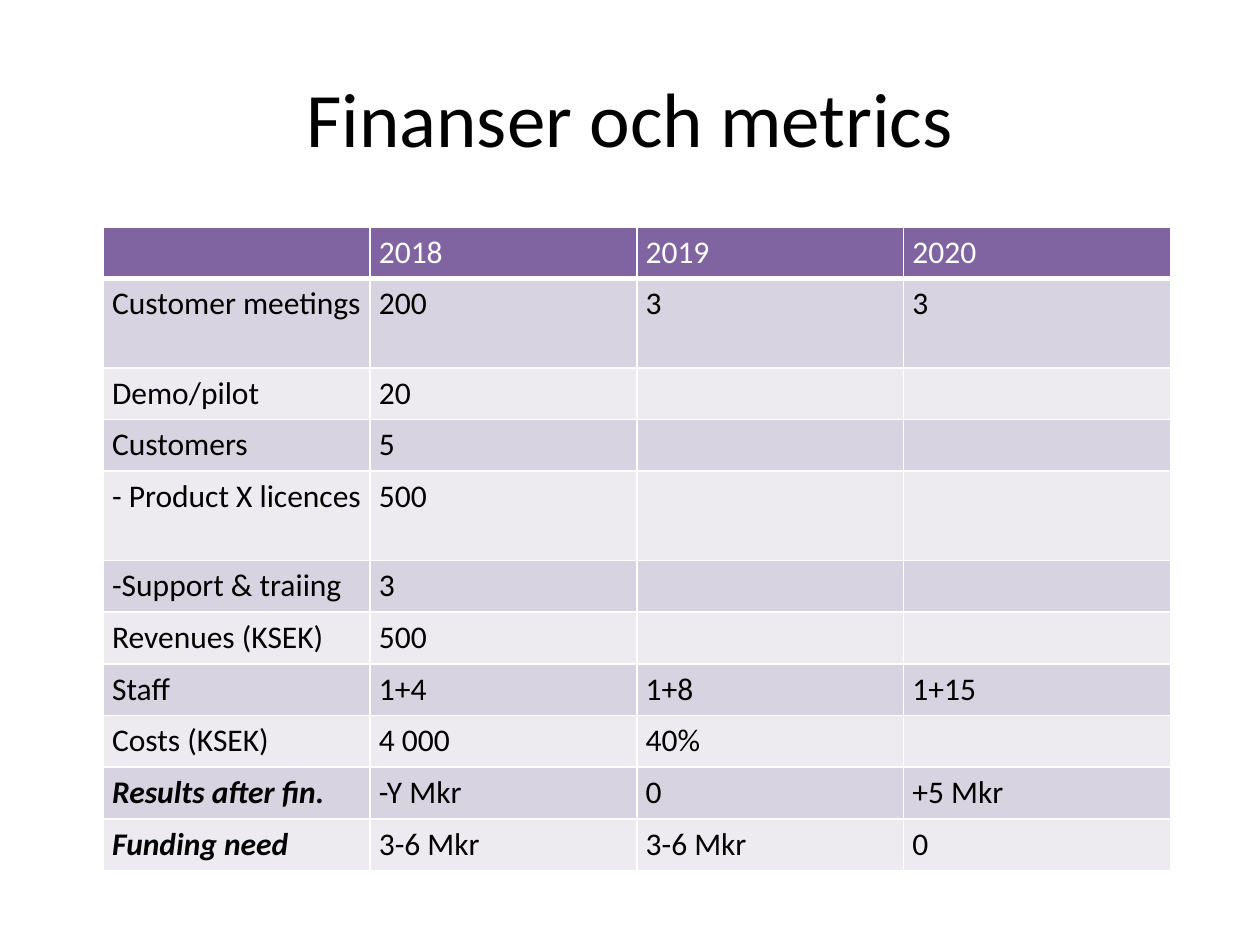
from dataclasses import dataclass

from lxml import etree
from pptx import Presentation
from pptx import util as u
from pptx.dml.color import RGBColor
from pptx.enum import text
from pptx.oxml.ns import qn

SLIDE_W, SLIDE_H = 10, 7.5
FONT = "Calibri"
WHITE, BLACK, PURPLE = "FFFFFF", "000000", "8064A2"
BANDS = ("D8D3E0", "EDEAF0")
LINE_H, TALL_H = 0.41, 0.71
THIN, THICK = 1, 3


@dataclass
class Metric:
    label: str
    years: tuple[str, str, str]
    lines: int = 1
    emphasis: bool = False


HEADER = Metric("", ("2018", "2019", "2020"))
METRICS = [
    Metric("Customer meetings", ("200", "3", "3"), lines=2),
    Metric("Demo/pilot", ("20", "", "")),
    Metric("Customers", ("5", "", "")),
    Metric("- Product X licences", ("500", "", ""), lines=2),
    Metric("-Support & traiing", ("3", "", "")),
    Metric("Revenues (KSEK)", ("500", "", "")),
    Metric("Staff", ("1+4", "1+8", "1+15")),
    Metric("Costs (KSEK)", ("4 000", "40%", "")),
    Metric("Results after fin.", ("-Y Mkr", "0", "+5 Mkr"), emphasis=True),
    Metric("Funding need", ("3-6 Mkr", "3-6 Mkr", "0"), emphasis=True),
]


def rgb(value: str) -> RGBColor:
    return RGBColor.from_string(value)


def style_font(font, size: float, color: str, emphasis: bool = False) -> None:
    font.name, font.size = FONT, u.Pt(size)
    font.color.rgb = rgb(color)
    font.bold = font.italic = emphasis


def add_borders(cell, top: float, bottom: float) -> None:
    """Draw white cell borders; call before the fill, which must follow them."""
    properties = cell._tc.get_or_add_tcPr()
    for side, width in (("L", THIN), ("R", THIN), ("T", top), ("B", bottom)):
        line = etree.SubElement(properties, qn(f"a:ln{side}"), w=str(u.Pt(width)))
        solid = etree.SubElement(line, qn("a:solidFill"))
        etree.SubElement(solid, qn("a:srgbClr"), val=WHITE)


def add_title(slide, title: str) -> None:
    box = slide.shapes.add_textbox(
        u.Inches(0.05 * SLIDE_W), u.Inches(0.04 * SLIDE_H),
        u.Inches(0.9 * SLIDE_W), u.Inches(SLIDE_H / 6))
    frame = box.text_frame
    frame.word_wrap = True
    frame.vertical_anchor = text.MSO_ANCHOR.MIDDLE
    frame.text = title
    frame.paragraphs[0].alignment = text.PP_ALIGN.CENTER
    style_font(frame.paragraphs[0].runs[0].font, 44, BLACK)


def fill_row(table, row: int, metric: Metric) -> None:
    is_header = row == 0
    table.rows[row].height = u.Inches(LINE_H if metric.lines == 1 else TALL_H)
    for column, content in enumerate((metric.label, *metric.years)):
        cell = table.cell(row, column)
        add_borders(cell, THICK if row == 1 else THIN, THICK if is_header else THIN)
        cell.fill.solid()
        cell.fill.fore_color.rgb = rgb(PURPLE if is_header else BANDS[(row - 1) % 2])
        cell.margin_left = cell.margin_right = u.Inches(0.07)
        cell.margin_top = cell.margin_bottom = u.Inches(0.05)
        if content:
            cell.text_frame.text = content
            style_font(cell.text_frame.paragraphs[0].runs[0].font, 18,
                       WHITE if is_header else BLACK,
                       metric.emphasis and column == 0)


def add_metrics_table(slide) -> None:
    rows = [HEADER, *METRICS]
    columns = 1 + len(HEADER.years)
    table = slide.shapes.add_table(
        len(rows), columns, u.Inches(0.82), u.Inches(0.24 * SLIDE_H),
        u.Inches(8.47), u.Inches(LINE_H * len(rows))).table
    for row, metric in enumerate(rows):
        fill_row(table, row, metric)


def main() -> None:
    deck = Presentation()
    deck.slide_width, deck.slide_height = u.Inches(SLIDE_W), u.Inches(SLIDE_H)
    slide = deck.slides.add_slide(deck.slide_layouts[6])
    add_metrics_table(slide)
    add_title(slide, "Finanser och metrics")
    deck.save("out.pptx")


if __name__ == "__main__":
    main()
